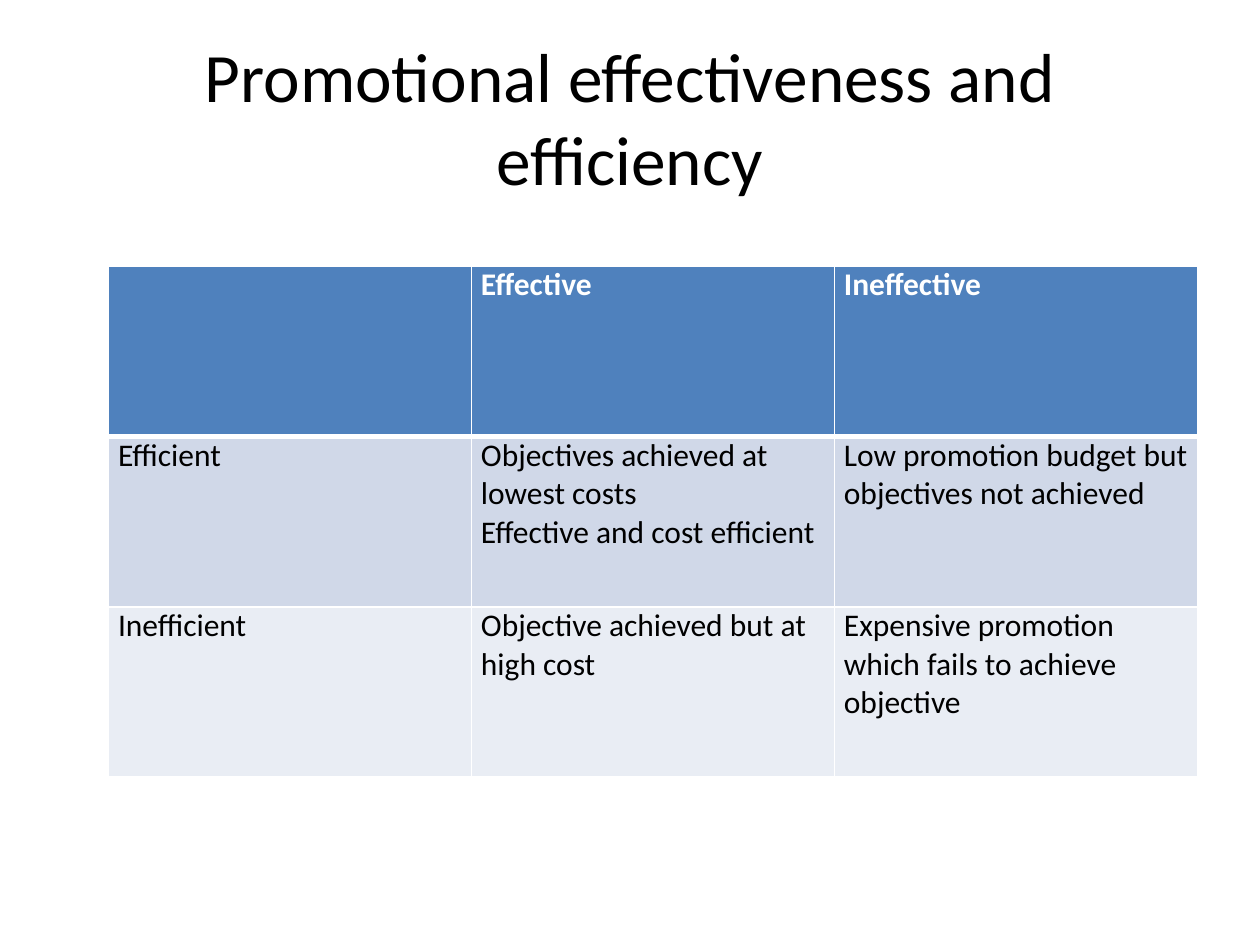
from lxml.etree import SubElement as Sub
from pptx import Presentation
from pptx.dml.color import RGBColor as Rgb
from pptx.enum.text import MSO_ANCHOR as Anchor, PP_ALIGN as Align
from pptx.oxml.ns import qn
from pptx.util import Cm, Pt

BLACK = Rgb(0x00, 0x00, 0x00)
WHITE = Rgb(0xFF, 0xFF, 0xFF)
BLUE = Rgb(0x4F, 0x81, 0xBD)
MIST = Rgb(0xD0, 0xD8, 0xE8)
PALE = Rgb(0xE9, 0xED, 0xF4)

ROWS = [
    (BLUE, ["", "Effective", "Ineffective"]),
    (MIST, ["Efficient",
            "Objectives achieved at lowest costs\nEffective and cost efficient",
            "Low promotion budget but objectives not achieved"]),
    (PALE, ["Inefficient",
            "Objective achieved but at high cost",
            "Expensive promotion which fails to achieve objective"]),
]


class Deck:
    """Holds the text style and the current slide, and draws each kind of element."""

    face = "Calibri"

    def __init__(self):
        self.prs = Presentation()
        self.prs.slide_width, self.prs.slide_height = Cm(25.4), Cm(19.05)
        self.slide = self.prs.slides.add_slide(self.prs.slide_layouts[6])

    def label(self, frame, text, size, color, bold=False, align=Align.LEFT):
        frame.text = text
        frame.word_wrap = True
        for para in frame.paragraphs:
            para.alignment = align
            font = para.font
            font.name, font.size, font.bold = self.face, Pt(size), bold
            font.color.rgb = color

    def title(self, text, left, top, width, height):
        frame = self.slide.shapes.add_textbox(left, top, width, height).text_frame
        frame.vertical_anchor = Anchor.MIDDLE
        self.label(frame, text, 39.6, BLACK, align=Align.CENTER)

    def border(self, cell, side, width):
        line = Sub(cell._tc.get_or_add_tcPr(), qn(f"a:ln{side}"), w=str(Pt(width)))
        Sub(Sub(line, qn("a:solidFill")), qn("a:srgbClr"), val=str(WHITE))

    def table(self, rows, left, top, width, height):
        grid = self.slide.shapes.add_table(
            len(rows), len(rows[0][1]), left, top, width, height).table
        for r, (fill, texts) in enumerate(rows):
            head = r == 0
            for c, text in enumerate(texts):
                cell = grid.cell(r, c)
                cell.margin_left = cell.margin_right = Cm(0.19)
                cell.margin_top = cell.margin_bottom = 0
                self.label(cell.text_frame, text, 18, WHITE if head else BLACK, head)
                for side in "LRTB":
                    thick = (r, side) in ((0, "B"), (1, "T"))
                    self.border(cell, side, 3 if thick else 1)
                cell.fill.solid()
                cell.fill.fore_color.rgb = fill


def main():
    deck = Deck()
    deck.title("Promotional effectiveness and efficiency",
               Cm(1.27), Cm(0.76), Cm(22.86), Cm(3.18))
    deck.table(ROWS, Cm(2.19), Cm(5.36), Cm(21.95), Cm(10.31))
    deck.prs.save("out.pptx")


if __name__ == "__main__":
    main()
